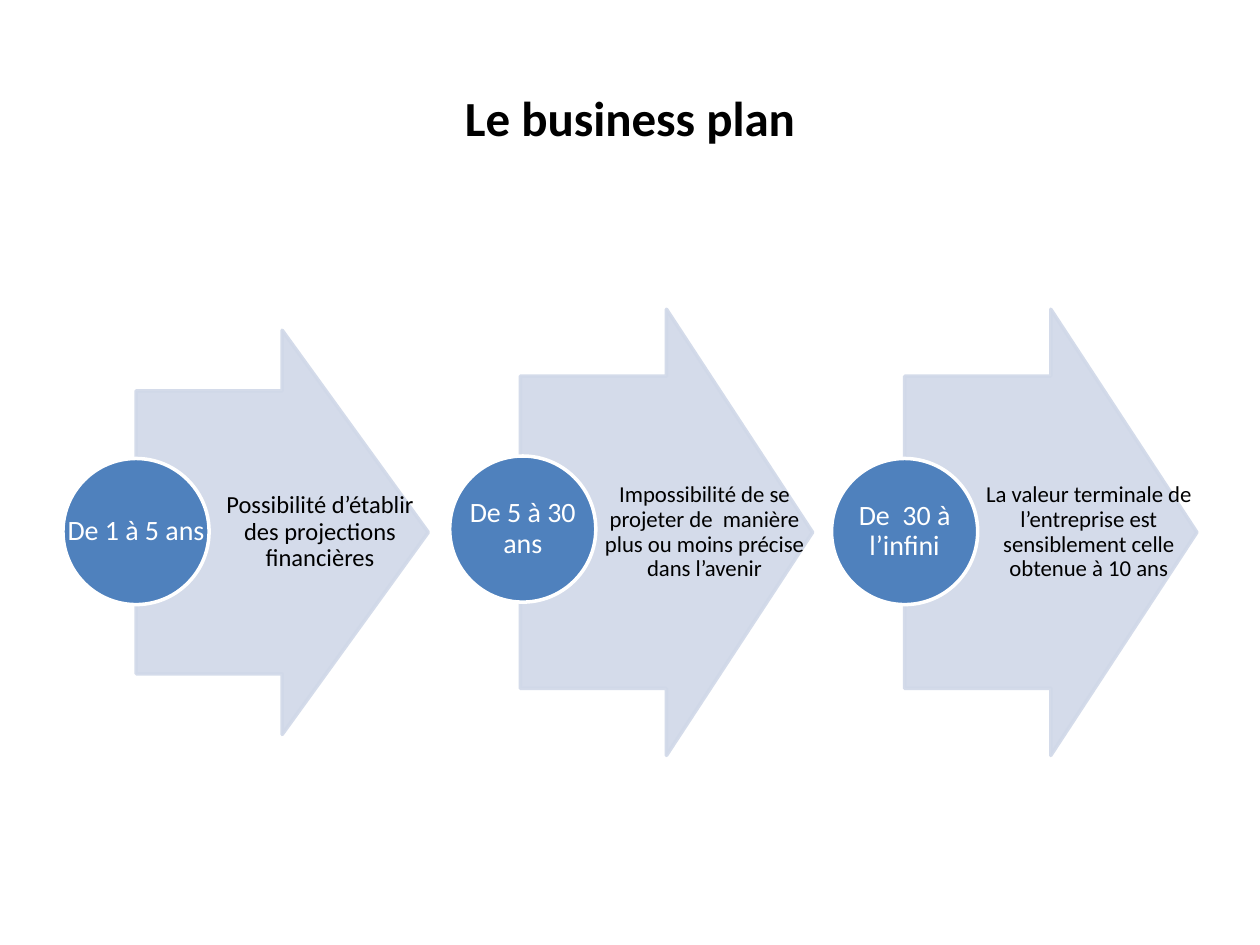
from lxml import etree
from pptx import Presentation
from pptx.dml.color import RGBColor
from pptx.enum import shapes as kinds, text as txt
from pptx.oxml import ns
from pptx.util import Pt

BLACK = RGBColor(0, 0, 0)
WHITE = RGBColor(255, 255, 255)
BLUE = RGBColor(0x4F, 0x81, 0xBD)
PALE = RGBColor(0xD0, 0xD8, 0xE8)

STEPS = [
    ("De 1 à 5 ans", "Possibilité d’établir des projections financières", 14, 231, 36, 262),
    ("De 5 à 30 ans", "Impossibilité de se projeter de  manière plus ou moins précise dans l’avenir",
     13, 255, 257, 260.6),
    ("De  30 à l’infini", "La valeur terminale de l’entreprise est sensiblement celle obtenue à 10 ans",
     13, 255, 475.2, 262),
]
LEFT, STEP, WIDE, MID, DISC = 77.75, 219.6, 167, 304.2, 83.5


def set_all(item, values):
    for name, value in values.items():
        setattr(item, name, value)


def add_text(slide, box, words, size, color, pads, bold=False, line=1.0):
    frame = slide.shapes.add_textbox(*map(Pt, box)).text_frame
    left, top, right, low = map(Pt, pads)
    set_all(frame, {"word_wrap": True, "vertical_anchor": txt.MSO_ANCHOR.MIDDLE,
                    "margin_left": left, "margin_top": top,
                    "margin_right": right, "margin_bottom": low})
    para = frame.paragraphs[0]
    set_all(para, {"alignment": txt.PP_ALIGN.CENTER, "line_spacing": line})
    run = para.add_run()
    run.text = words
    set_all(run.font, {"name": "Calibri", "size": Pt(size), "bold": bold})
    run.font.color.rgb = color


def add_form(slide, kind, box, fill, edge):
    form = slide.shapes.add_shape(kind, *map(Pt, box))
    form.shadow.inherit = False
    form.fill.solid()
    form.fill.fore_color.rgb = fill
    form.line.color.rgb = edge
    form.line.width = Pt(2)
    return form


def add_arrow(slide, box, words, size):
    left, top, wide, high = box
    arrow = add_form(slide, kinds.MSO_SHAPE.RIGHT_ARROW, box, PALE, PALE)
    arrow.adjustments[0] = 0.7
    arrow.adjustments[1] = 0.5
    for color in arrow.fill._xPr.iter(ns.qn("a:srgbClr")):
        etree.SubElement(color, ns.qn("a:alpha"), val="90000")
    area = (left + wide / 4, top, wide * 3 / 4, high)
    add_text(slide, area, words, size, BLACK, (3, 0.7, 1.5, 0.7), line=0.9)


def add_disc(slide, box, words):
    add_form(slide, kinds.MSO_SHAPE.OVAL, box, BLUE, WHITE)
    add_text(slide, box, words, 16, WHITE, (0.7,) * 4, line=0.9)


def main():
    deck = Presentation()
    set_all(deck, {"slide_width": Pt(720), "slide_height": Pt(540)})
    slide = deck.slides.add_slide(deck.slide_layouts[6])
    add_text(slide, (36, 21.6, 648, 90), "Le business plan", 28, BLACK, (7.2, 3.6) * 2, bold=True)
    for i, (span, words, size, high, left, top) in enumerate(STEPS):
        add_arrow(slide, (LEFT + i * STEP, MID - high / 2, WIDE, high), words, size)
        add_disc(slide, (left, top, DISC, DISC), span)
    deck.save("out.pptx")


if __name__ == "__main__":
    main()
